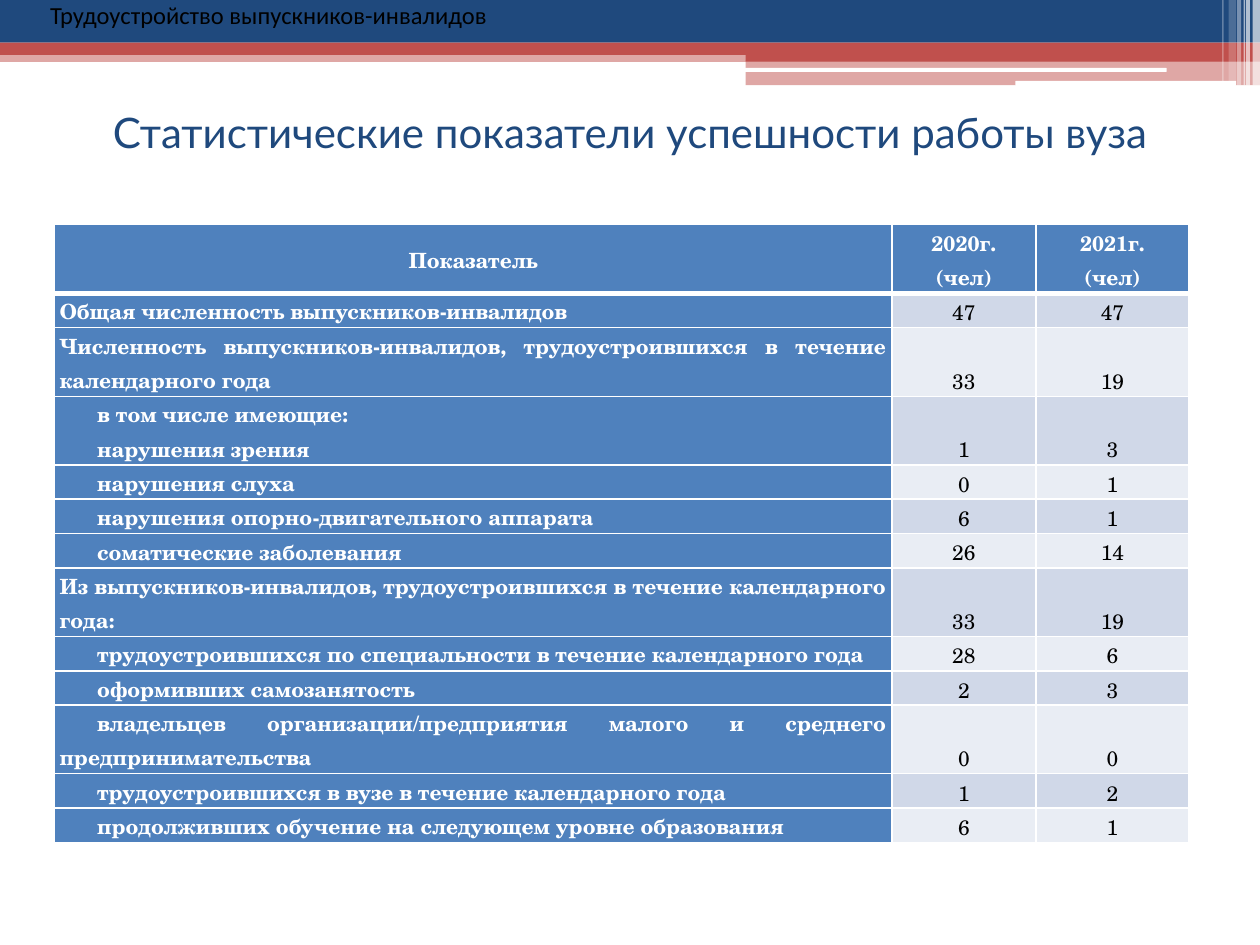
from lxml import etree
from pptx import Presentation
from pptx import util as u
from pptx.dml.color import RGBColor
from pptx.enum import shapes, text
from pptx.oxml import ns

Cm, Pt = u.Cm, u.Pt
NAVY, RED, WHITE, BLUE = "1F497D", "C0504D", "FFFFFF", "4F81BD"
BANDS = ["D0D8E8", "E9EDF4"]
INDENT = Cm(0.76)
ALIGN, ANCHOR = text.PP_ALIGN, text.MSO_ANCHOR


def paint(fill, color, alpha=100):
    fill.solid()
    fill.fore_color.rgb = RGBColor.from_string(color)
    if alpha < 100:
        node = next(fill._xPr.iter(ns.qn("a:srgbClr")))
        etree.SubElement(node, ns.qn("a:alpha"), val=str(alpha * 1000))


def style(par, color, **form):
    font = par.font
    font.color.rgb = RGBColor.from_string(color)
    for key, val in form.items():
        setattr(font, key, val)


prs = Presentation()
prs.slide_width, prs.slide_height = Cm(25.4), Cm(19.05)
slide = prs.slides.add_slide(prs.slide_layouts[5])
tree = slide.shapes

# Header bars and the stripes at the right edge
RECT, ROUND = shapes.MSO_SHAPE.RECTANGLE, shapes.MSO_SHAPE.ROUNDED_RECTANGLE
bars = [
    (RECT, 0, 1.02, 25.4, 0.23, RED, 50),
    (RECT, 0, 0, 25.4, 0.86, NAVY, 100),
    (RECT, 0, 0.86, 25.4, 0.25, RED, 100),
    (RECT, 15.03, 0.99, 10.37, 0.25, RED, 100),
    (RECT, 15.03, 1.22, 10.37, 0.5, RED, 50),
    (ROUND, 15.01, 1.37, 8.51, 0.08, WHITE, 100),
    (ROUND, 20.47, 1.63, 4.45, 0.1, WHITE, 100),
    (RECT, 25.25, 0, 0.15, 1.73, WHITE, 65),
    (RECT, 25.12, 0, 0.08, 1.73, WHITE, 65),
    (RECT, 25.07, 0, 0.03, 1.73, WHITE, 60),
    (RECT, 24.94, 0, 0.08, 1.73, WHITE, 40),
    (RECT, 24.77, 0, 0.15, 1.63, WHITE, 20),
    (RECT, 24.64, 0, 0.03, 1.63, WHITE, 30),
]
for kind, x, y, w, h, color, alpha in bars:
    bar = tree.add_shape(kind, Cm(x), Cm(y), Cm(w), Cm(h))
    bar.shadow.inherit = False
    bar.line.fill.background()
    paint(bar.fill, color, alpha)

# Title
title = tree.title
title.left, title.top, title.width, title.height = Cm(0.3), Cm(1.78), Cm(24.8), Cm(1.75)
title.text_frame.text = "Статистические показатели успешности работы вуза"
title.text_frame.vertical_anchor = ANCHOR.MIDDLE
par = title.text_frame.paragraphs[0]
par.alignment = ALIGN.CENTER
style(par, NAVY, size=Pt(24), name="Lato")

# Table: label, value for each year, whether the label is indented
rows = [
    ("Показатель", "2020г.\n(чел)", "2021г.\n(чел)", False),
    ("Общая численность выпускников-инвалидов", "47", "47", False),
    ("Численность выпускников-инвалидов, трудоустроившихся в течение календарного года",
     "33", "19", False),
    ("в том числе имеющие:\nнарушения зрения", "1", "3", True),
    ("нарушения слуха", "0", "1", True),
    ("нарушения опорно-двигательного аппарата", "6", "1", True),
    ("соматические заболевания", "26", "14", True),
    ("Из выпускников-инвалидов, трудоустроившихся в течение календарного года:",
     "33", "19", False),
    ("трудоустроившихся по специальности в течение календарного года", "28", "6", True),
    ("оформивших самозанятость", "2", "3", True),
    ("владельцев организации/предприятия малого и среднего предпринимательства",
     "0", "0", True),
    ("трудоустроившихся в вузе в течение календарного года", "1", "2", True),
    ("продолживших обучение на следующем уровне образования", "6", "1", True),
]
tall = {0, 2, 3, 7, 10}
table = tree.add_table(len(rows), 3, Cm(1.1), Cm(4.53), Cm(22.87), Cm(12.2)).table
table.horz_banding = False
for col, width in zip(table.columns, (16.88, 2.9, 3.09)):
    col.width = Cm(width)

for r, (*words, inner) in enumerate(rows):
    table.rows[r].height = Cm(1.38 if r in tall else 0.67)
    for c, word in enumerate(words):
        cell = table.cell(r, c)
        head, label = r == 0, c == 0
        cell.text = word
        form = {"margin_left": Cm(0.1), "margin_right": Cm(0.1),
                "margin_top": 0, "margin_bottom": 0,
                "vertical_anchor": ANCHOR.MIDDLE if head
                else ANCHOR.TOP if label else ANCHOR.BOTTOM}
        for key, val in form.items():
            setattr(cell, key, val)

        # White cell borders, thicker under the header
        props = cell._tc.get_or_add_tcPr()
        for side in "LRTB":
            thick = (head and side == "B") or (r == 1 and side == "T")
            line = etree.SubElement(props, ns.qn("a:ln" + side),
                                    w=str(Pt(3 if thick else 1)))
            solid = etree.SubElement(line, ns.qn("a:solidFill"))
            etree.SubElement(solid, ns.qn("a:srgbClr"), val=WHITE)
        paint(cell.fill, BLUE if head or label else BANDS[(r - 1) % 2])

        for par in cell.text_frame.paragraphs:
            par.line_spacing = 1.06
            par.alignment = ALIGN.JUSTIFY if label and not head else ALIGN.CENTER
            if label and inner:
                par._p.get_or_add_pPr().set("indent", str(INDENT))
            style(par, WHITE if head or label else "000000", size=Pt(12),
                  name="TeX Gyre Schola", bold=head or label)

# Section name over the top bar
box = tree.add_textbox(0, 0, Cm(25.4), Cm(1.27))
frame = box.text_frame
frame.margin_top = frame.margin_bottom = 0
frame.word_wrap = True
frame.text = "Трудоустройство выпускников-инвалидов"
par = frame.paragraphs[0]
par._p.get_or_add_pPr().set("indent", str(INDENT))
style(par, "000000", size=Pt(14), name="Calibri")

prs.save("out.pptx")
